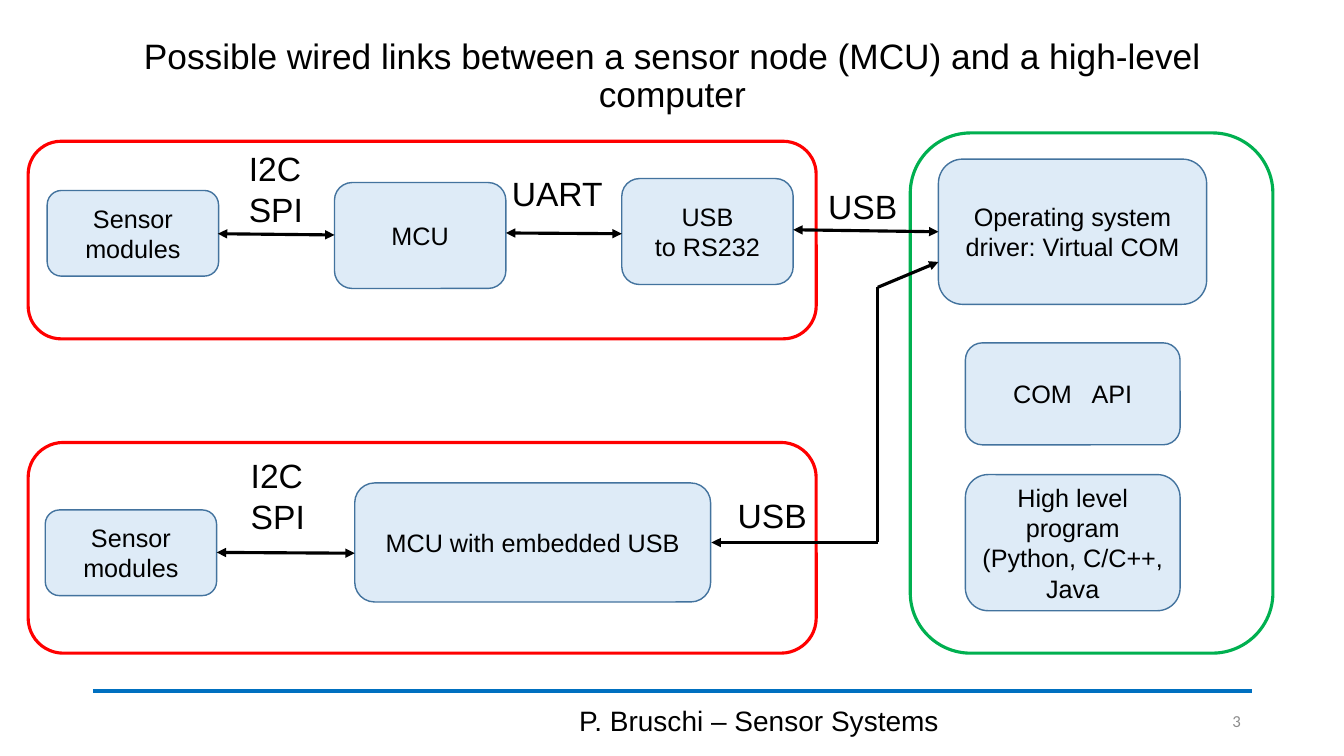
"""Build a slide on wired links between a sensor node and a computer."""
from lxml import etree
from pptx import Presentation
from pptx.dml.color import RGBColor
from pptx.enum.shapes import MSO_CONNECTOR, MSO_SHAPE
from pptx.enum.text import MSO_ANCHOR, PP_ALIGN
from pptx.oxml.ns import qn
from pptx.util import Cm, Pt

ROUND = MSO_SHAPE.ROUNDED_RECTANGLE
STRAIGHT = MSO_CONNECTOR.STRAIGHT
MIDDLE, TOP = MSO_ANCHOR.MIDDLE, MSO_ANCHOR.TOP
LEFT, CENTER, RIGHT = PP_ALIGN.LEFT, PP_ALIGN.CENTER, PP_ALIGN.RIGHT

BLACK = RGBColor(0x00, 0x00, 0x00)
GRAY = RGBColor(0x8C, 0x8C, 0x8C)
RED = RGBColor(0xFF, 0x00, 0x00)
GREEN = RGBColor(0x00, 0xB0, 0x50)
BLUE = RGBColor(0x00, 0x70, 0xC0)
PALE = RGBColor(0xDE, 0xEB, 0xF7)
STEEL = RGBColor(0x43, 0x73, 0x9E)


def write(frame, text, size, align, anchor, font="Arial", color=BLACK, wrap=True):
    frame.text = text
    frame.word_wrap = wrap
    frame.vertical_anchor = anchor
    for para in frame.paragraphs:
        para.alignment = align
        para.font.name = font
        para.font.size = Pt(size)
        para.font.color.rgb = color


def link(x1, y1, x2, y2, ends=(), color=BLACK, width=2.25):
    line = slide.shapes.add_connector(STRAIGHT, Cm(x1), Cm(y1), Cm(x2), Cm(y2))
    line.line.color.rgb = color
    line.line.width = Pt(width)
    for end in ends:
        etree.SubElement(line.line._get_or_add_ln(), qn(f"a:{end}"), type="triangle")
    etree.SubElement(line._element.spPr, qn("a:effectLst"))


deck = Presentation()
deck.slide_width, deck.slide_height = Cm(33.87), Cm(19.05)
slide = deck.slides.add_slide(deck.slide_layouts[6])

link(2.34, 17.42, 31.55, 17.42, color=BLUE, width=2.75)

title = slide.shapes.add_textbox(Cm(2.34), Cm(1.02), Cm(29.21), Cm(1.83)).text_frame
write(title, "Possible wired links between a sensor node (MCU) and a high-level computer",
      25.2, CENTER, MIDDLE)
title.paragraphs[0].line_spacing = 0.9

footer = slide.shapes.add_textbox(Cm(11.23), Cm(17.65), Cm(15.8), Cm(1.02))
write(footer.text_frame, "P. Bruschi – Sensor Systems", 20, CENTER, MIDDLE)
number = slide.shapes.add_textbox(Cm(29.08), Cm(17.65), Cm(2.44), Cm(1.02))
write(number.text_frame, "3", 12, RIGHT, MIDDLE, "Calibri", GRAY)

blocks = [
    ("USB\nto RS232", 15.67, 4.5, 4.32, 2.67),
    ("MCU with embedded USB", 8.94, 12.17, 8.97, 3.0),
    ("Sensor modules", 1.19, 4.8, 4.32, 2.16),
    ("Sensor modules", 1.14, 12.85, 4.32, 2.16),
    ("Operating system driver: Virtual COM", 23.65, 4.01, 6.76, 3.66),
    ("COM   API", 24.33, 8.64, 5.41, 2.57),
    ("High level program (Python, C/C++, Java", 24.33, 11.96, 5.41, 3.43),
    ("MCU", 8.43, 4.6, 4.32, 2.67),
]
for text, x, y, w, h in blocks:
    block = slide.shapes.add_shape(ROUND, Cm(x), Cm(y), Cm(w), Cm(h))
    block.shadow.inherit = False
    block.fill.solid()
    block.fill.fore_color.rgb = PALE
    block.line.color.rgb = STEEL
    block.line.width = Pt(1)
    write(block.text_frame, text, 18, CENTER, MIDDLE)

frames = [
    (RED, 0.71, 3.56, 19.86, 4.98),
    (RED, 0.71, 11.15, 19.86, 5.31),
    (GREEN, 22.94, 3.35, 9.14, 13.11),
]
for color, x, y, w, h in frames:
    frame = slide.shapes.add_shape(ROUND, Cm(x), Cm(y), Cm(w), Cm(h))
    frame.shadow.inherit = False
    frame.fill.background()
    frame.line.color.rgb = color
    frame.line.width = Pt(2.25)

BOTH = ("headEnd", "tailEnd")
link(5.49, 5.89, 8.43, 5.92, BOTH)
link(12.75, 5.87, 15.67, 5.89, BOTH)
link(19.99, 5.79, 23.65, 5.84, BOTH)
link(5.46, 13.92, 8.94, 13.94, BOTH)
link(17.93, 13.67, 22.12, 13.67, ["headEnd"])
link(22.12, 7.24, 22.12, 13.67)
link(22.12, 7.24, 23.65, 6.6, ["tailEnd"])

labels = [
    ("I2C\nSPI", 6.02, 3.61, 1.88, 2.31),
    ("I2C\nSPI", 6.07, 11.35, 1.88, 2.31),
    ("UART", 12.65, 4.24, 2.82, 1.27),
    ("USB", 20.62, 4.57, 2.26, 1.27),
    ("USB", 18.34, 12.34, 2.26, 1.27),
]
for text, x, y, w, h in labels:
    label = slide.shapes.add_textbox(Cm(x), Cm(y), Cm(w), Cm(h))
    write(label.text_frame, text, 24, LEFT, TOP, wrap=False)

deck.save("out.pptx")
